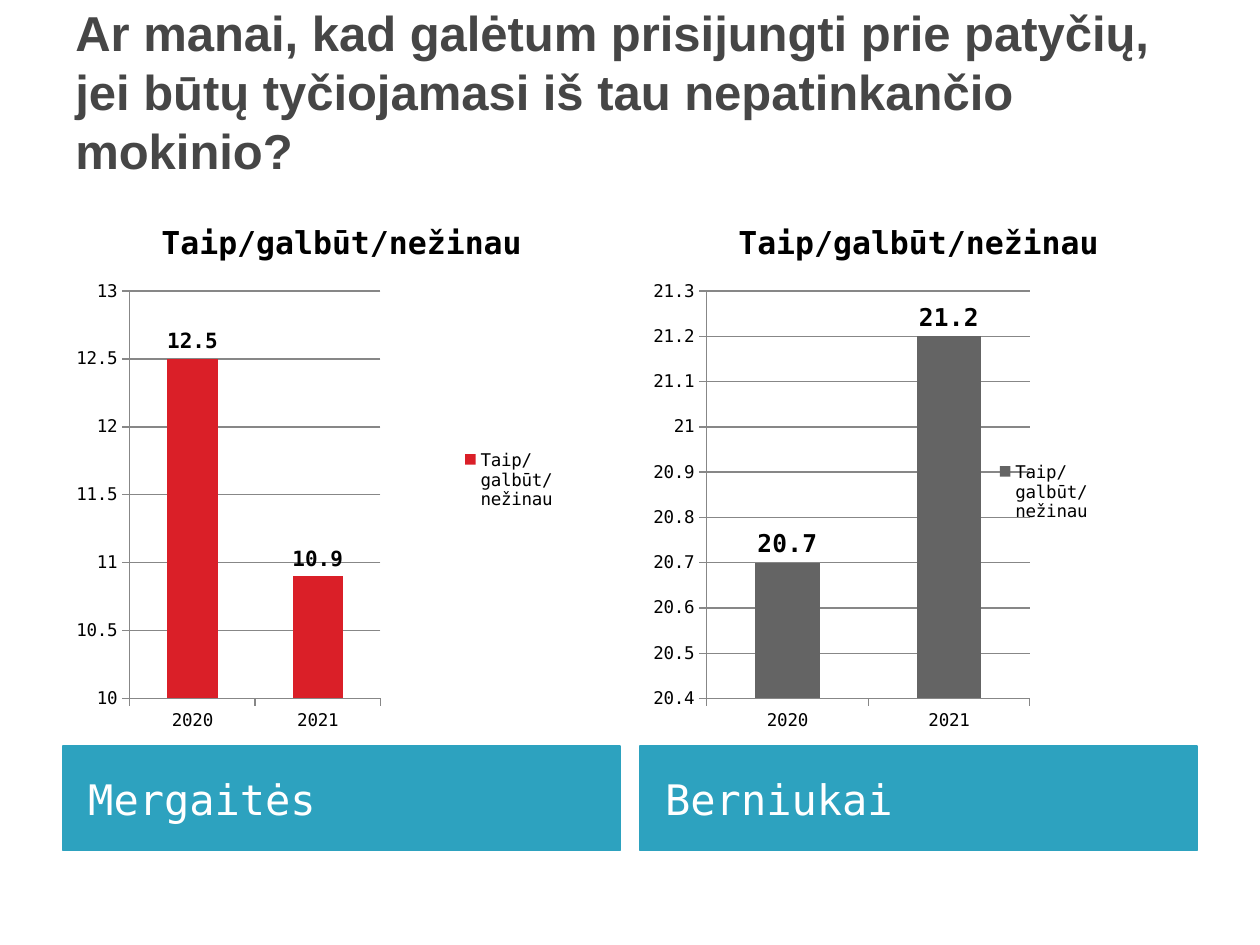
from lxml import etree
from pptx import Presentation
from pptx.chart import data
from pptx.dml import color
from pptx.enum import chart as kinds, shapes, text
from pptx import util as u
from pptx.oxml import ns

HUES = {"ink": "464646", "teal": "2DA2BF", "red": "DA1F28", "gray": "646464",
        "line": "878787", "black": "000000", "white": "FFFFFF"}
MONO = "DejaVu Sans Mono"
ASK = ("Ar manai, kad galėtum prisijungti prie patyčių, "
       "jei būtų tyčiojamasi iš tau nepatinkančio mokinio?")
REPLY = "Taip/galbūt/nežinau"
WIDE = 11.23


class Deck:
    def __init__(self):
        self.file = Presentation()
        self.file.slide_width = u.Cm(25.4)
        self.file.slide_height = u.Cm(19.05)
        self.page = self.file.slides.add_slide(self.file.slide_layouts[6])

    def hue(self, name):
        return color.RGBColor.from_string(HUES[name])

    def font(self, font, size, name, face=MONO, bold=False):
        font.size = u.Pt(size)
        font.name = face
        font.bold = bold
        font.color.rgb = self.hue(name)

    def head(self, words):
        box = self.page.shapes.add_textbox(u.Cm(1.27), u.Cm(0.76), u.Cm(22.86), u.Cm(3.18))
        frame = box.text_frame
        frame.word_wrap = True
        frame.vertical_anchor = text.MSO_ANCHOR.MIDDLE
        frame.margin_bottom = u.Cm(1.17)
        frame.text = words
        self.font(frame.paragraphs[0].runs[0].font, 28, "ink", "Arial", True)

    def band(self, left, words):
        box = self.page.shapes.add_shape(
            shapes.MSO_SHAPE.RECTANGLE, u.Cm(left), u.Cm(15.04), u.Cm(WIDE), u.Cm(2.11))
        box.shadow.inherit = False
        box.fill.solid()
        box.fill.fore_color.rgb = self.hue("teal")
        box.line.color.rgb = self.hue("teal")
        box.line.width = u.Pt(0.75)
        frame = box.text_frame
        frame.word_wrap = True
        frame.vertical_anchor = text.MSO_ANCHOR.MIDDLE
        frame.margin_left = u.Cm(0.51)
        frame.text = words
        line = frame.paragraphs[0]
        line.alignment = text.PP_ALIGN.LEFT
        self.font(line.runs[0].font, 24, "white")

    def place(self, node, index, spot, inner=False):
        for old in node.findall(ns.qn("c:layout")):
            node.remove(old)
        frame = etree.Element(ns.qn("c:layout"))
        node.insert(index, frame)
        manual = etree.SubElement(frame, ns.qn("c:manualLayout"))
        pairs = [("xMode", "edge"), ("yMode", "edge"), *zip("xywh", spot)]
        if inner:
            pairs.insert(0, ("layoutTarget", "inner"))
        for tag, value in pairs:
            etree.SubElement(manual, ns.qn("c:" + tag)).set("val", str(value))

    def chart(self, left, vals, hue, scale, size, wide, key):
        table = data.CategoryChartData()
        table.categories = ["2020", "2021"]
        table.add_series(REPLY, vals)
        chart = self.page.shapes.add_chart(
            kinds.XL_CHART_TYPE.COLUMN_CLUSTERED, u.Cm(left), u.Cm(4.01),
            u.Cm(WIDE), u.Cm(10.95), table).chart
        self.font(chart.font, 10, "black")
        chart.has_title = True
        title = chart.chart_title.text_frame
        title.text = REPLY
        self.font(title.paragraphs[0].runs[0].font, 18, "black", bold=True)
        chart.has_legend = True
        chart.legend.position = kinds.XL_LEGEND_POSITION.RIGHT
        chart.legend.include_in_layout = False
        if key:
            self.place(chart.legend._element, 1, key)
        self.bars(chart.plots[0], hue, size)
        self.axes(chart, scale)
        area = chart._chartSpace.find(".//" + ns.qn("c:plotArea"))
        self.place(area, 0, (0.12, 0.17, wide, 0.75), True)

    def bars(self, plot, hue, size):
        plot.gap_width = 150
        plot.vary_by_categories = False
        fill = plot.series[0].format.fill
        fill.solid()
        fill.fore_color.rgb = self.hue(hue)
        plot.has_data_labels = True
        tags = plot.data_labels
        tags.show_value = True
        tags.position = kinds.XL_LABEL_POSITION.OUTSIDE_END
        self.font(tags.font, size, "black", bold=True)

    def axes(self, chart, scale):
        axis = chart.value_axis
        axis.minimum_scale, axis.maximum_scale, axis.major_unit = scale
        axis.has_major_gridlines = True
        axis.tick_labels.number_format = "General"
        axis.tick_labels.number_format_is_linked = False
        rules = [axis.major_gridlines.format.line]
        for side in (axis, chart.category_axis):
            side.major_tick_mark = kinds.XL_TICK_MARK.OUTSIDE
            rules.append(side.format.line)
        for rule in rules:
            rule.color.rgb = self.hue("line")
            rule.width = u.Pt(0.75)


def main():
    deck = Deck()
    deck.head(ASK)
    deck.band(1.27, "Mergaitės")
    deck.band(12.9, "Berniukai")
    deck.chart(1.27, (12.5, 10.9), "red", (10, 13, 0.5), 12, 0.45, None)
    deck.chart(12.9, (20.7, 21.2), "gray", (20.4, 21.3, 0.1), 14, 0.58,
               (0.63, 0.48, 0.19, 0.12))
    deck.file.save("out.pptx")


if __name__ == "__main__":
    main()
